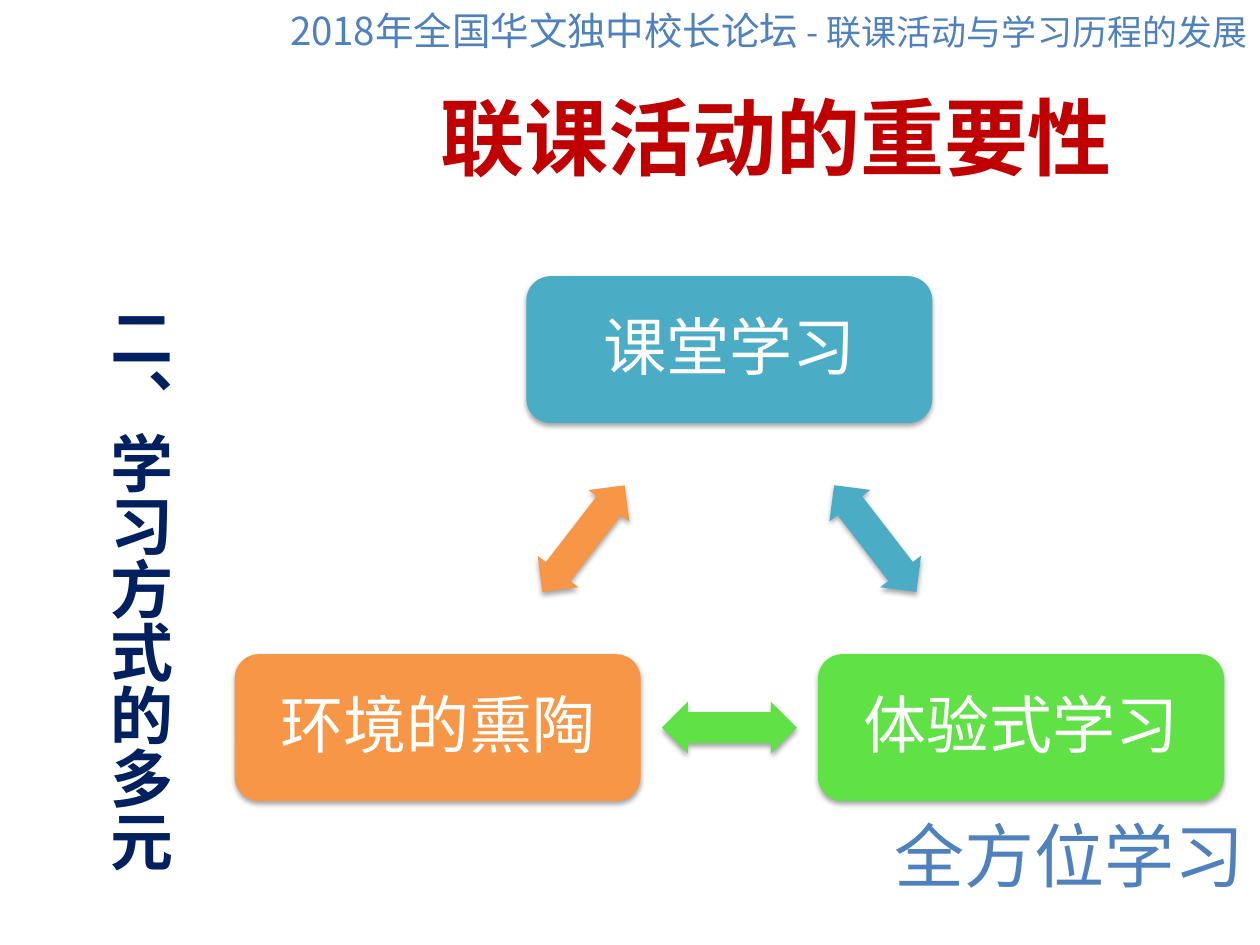
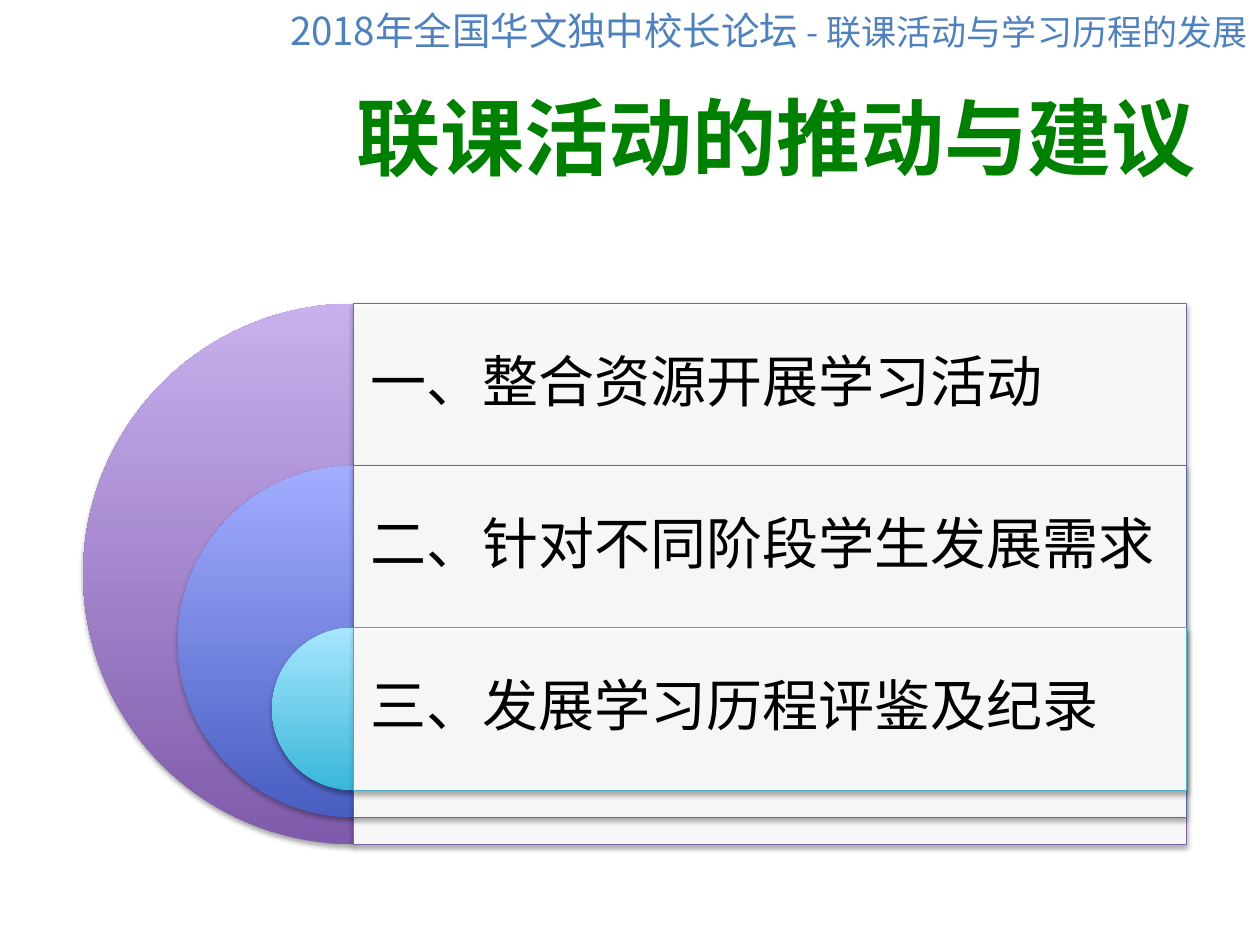
from dataclasses import dataclass
from math import atan2, degrees

from lxml.etree import SubElement
from pptx import Presentation
from pptx.dml.color import RGBColor
from pptx.enum.shapes import MSO_SHAPE as Preset
from pptx.enum.text import MSO_ANCHOR as Anchor, MSO_AUTO_SIZE as AutoSize, PP_ALIGN as Align
from pptx.oxml.ns import qn
from pptx.util import Pt


@dataclass(frozen=True)
class Theme:
    font: str = "Noto Sans CJK SC"
    blue: str = "4F81BD"
    pale_blue: str = "95B3D7"
    navy: str = "002060"
    red: str = "C00000"
    green: str = "008000"
    teal: str = "4BACC6"
    lime: str = "60E146"
    orange: str = "F79646"
    white: str = "FFFFFF"
    black: str = "000000"
    forum_size: int = 22
    topic_size: int = 20
    title_size: int = 48
    node_size: int = 36
    band_size: int = 32
    closing_size: int = 40


THEME = Theme()

WHITE_EDGE = (THEME.white, 0.75)
PALE_EDGE = (THEME.pale_blue, 0.25)

# name, colour, centre x, centre y
LEARNING_MODES = [
    ("课堂学习", THEME.teal, 416.8, 199.8),
    ("体验式学习", THEME.lime, 583.5, 415.8),
    ("环境的熏陶", THEME.orange, 250.1, 415.8),
]

# text, dark and light end of the half disc, edge of the panel
PROPOSALS = [
    ("一、整合资源开展学习活动", "7F5BAB", "C8B0ED", "8064A2"),
    ("二、针对不同阶段学生发展需求", "495EC2", "A2ADFF", "5767B4"),
    ("三、发展学习历程评鉴及纪录", "39B7D8", "A7E6FF", THEME.teal),
]


def apply(target, formats):
    for attribute, value in formats.items():
        setattr(target, attribute, value)


def points(*lengths):
    return [Pt(length) for length in lengths]


def add_colour(parent, colour, alpha=None):
    """Append an srgbClr, with an optional opacity in percent."""
    node = SubElement(parent, qn("a:srgbClr"), val=colour)
    if alpha is not None:
        SubElement(node, qn("a:alpha"), val=str(alpha * 1000))


def add_soft_shadow(shape):
    shape.shadow.inherit = False
    effects = shape._element.spPr.find(qn("a:effectLst"))
    shadow = SubElement(effects, qn("a:outerShdw"), blurRad=str(Pt(3.1)), dist=str(Pt(1.8)),
                        dir="5400000", rotWithShape="0")
    add_colour(shadow, THEME.black, 35)


def add_solid(slide, preset, box, colour, adjustments=()):
    """Add a borderless shape with a soft shadow; box is left, top, width, height."""
    shape = slide.shapes.add_shape(preset, *points(*box))
    for index, value in enumerate(adjustments):
        shape.adjustments[index] = value
    shape.fill.solid()
    shape.fill.fore_color.rgb = RGBColor.from_string(colour)
    shape.line.fill.background()
    add_soft_shadow(shape)
    return shape


def add_run(paragraph, text, size, colour, bold=False, edge=None):
    run = paragraph.add_run()
    run.text = text
    apply(run.font, {"size": Pt(size), "bold": bold, "name": THEME.font})
    run.font.color.rgb = RGBColor.from_string(colour)
    properties = run._r.get_or_add_rPr()
    SubElement(properties, qn("a:ea"), typeface=THEME.font)
    if edge:
        edge_colour, width = edge
        outline = SubElement(properties, qn("a:ln"), w=str(Pt(width)))
        add_colour(SubElement(outline, qn("a:solidFill")), edge_colour)
        properties.insert(0, outline)


def write(shape, runs, align=Align.CENTER, inset=None, paragraph_format=None, **frame_format):
    """Fill the first paragraph of a shape; each run is the arguments of add_run."""
    frame = shape.text_frame
    apply(frame, {"word_wrap": True, "vertical_anchor": Anchor.MIDDLE} | frame_format)
    if inset is not None:
        sides = ("margin_left", "margin_top", "margin_right", "margin_bottom")
        apply(frame, dict.fromkeys(sides, Pt(inset)))
    paragraph = frame.paragraphs[0]
    apply(paragraph, {"alignment": align} | (paragraph_format or {}))
    for run in runs:
        add_run(paragraph, *run)


def add_text(slide, box, runs, **formats):
    textbox = slide.shapes.add_textbox(*points(*box))
    write(textbox, runs, **formats)
    return textbox


def diagram_spacing(size):
    return {"line_spacing": 0.9, "space_after": Pt(0.35 * size)}


def add_forum_header(slide):
    add_text(slide, (0, 0.7, 720, 34), [
        ("2018年全国华文独中校长论坛 ", THEME.forum_size, THEME.blue, False, PALE_EDGE),
        ("- 联课活动与学习历程的发展", THEME.topic_size, THEME.blue, False, PALE_EDGE),
    ], align=Align.RIGHT, vertical_anchor=Anchor.TOP, auto_size=AutoSize.SHAPE_TO_FIT_TEXT)


def add_title(slide, text, colour):
    add_text(slide, (167, 32.4, 553, 90),
             [(text, THEME.title_size, colour, True, WHITE_EDGE)])


def add_vertical_heading(slide, text):
    heading = add_text(slide, (46.8, 167.8, 58.3, 334),
                       [(text, THEME.node_size, THEME.navy, True, WHITE_EDGE)],
                       align=Align.LEFT, vertical_anchor=Anchor.TOP, word_wrap=False,
                       auto_size=AutoSize.SHAPE_TO_FIT_TEXT)
    heading.text_frame._txBody.bodyPr.set("vert", "eaVert")
    indent = heading.text_frame.paragraphs[0]._p.get_or_add_pPr()
    indent.set("marL", str(Pt(42)))
    indent.set("indent", str(-Pt(42)))


def add_mode(slide, name, colour, x, y, width=232, height=84):
    node = add_solid(slide, Preset.ROUNDED_RECTANGLE,
                     (x - width / 2, y - height / 2, width, height), colour)
    write(node, [(name, THEME.node_size, THEME.white)], inset=15,
          paragraph_format=diagram_spacing(THEME.node_size))


def add_exchange_arrow(slide, start, end, width=77, height=29.5):
    """Add a double arrow halfway between two modes, turned along their line."""
    _, colour, x1, y1 = start
    _, _, x2, y2 = end
    box = ((x1 + x2 - width) / 2, (y1 + y2 - height) / 2, width, height)
    arrow = add_solid(slide, Preset.LEFT_RIGHT_ARROW, box, colour, (0.6, 0.5))
    arrow.rotation = degrees(atan2(y2 - y1, x2 - x1)) % 360


def add_half_disc(slide, centre_x, top, diameter, dark, light):
    disc = add_solid(slide, Preset.PIE, (centre_x - diameter / 2, top, diameter, diameter),
                     dark, (54, 162))
    disc.fill.gradient()
    disc.fill.gradient_angle = 90
    for stop, colour in zip(disc.fill.gradient_stops, (dark, light)):
        stop.color.rgb = RGBColor.from_string(colour)


def add_panel(slide, box, edge):
    panel = add_solid(slide, Preset.RECTANGLE, box, THEME.white)
    white = panel._element.spPr.find(qn("a:solidFill")).find(qn("a:srgbClr"))
    SubElement(white, qn("a:alpha"), val="90000")
    panel.line.color.rgb = RGBColor.from_string(edge)
    panel.line.width = Pt(0.75)


def add_proposals(slide, left=202, top=173.5, width=476, band=92.6, diameter=309, shrink=108):
    for level, (text, dark, light, edge) in enumerate(PROPOSALS):
        level_top = top + level * band
        size = diameter - level * shrink
        add_half_disc(slide, left, level_top, size, dark, light)
        add_panel(slide, (left, level_top, width, size), edge)
        add_text(slide, (left, level_top, width, band),
                 [(text, THEME.band_size, THEME.black)], align=Align.LEFT, inset=9.6,
                 paragraph_format=diagram_spacing(THEME.band_size))


def build_importance(slide):
    for index, mode in enumerate(LEARNING_MODES):
        add_mode(slide, *mode)
        add_exchange_arrow(slide, mode, LEARNING_MODES[(index + 1) % len(LEARNING_MODES)])
    add_title(slide, "联课活动的重要性", THEME.red)
    add_vertical_heading(slide, "二、学习方式的多元")
    add_text(slide, (502.5, 445.7, 217.5, 85),
             [("全方位学习", THEME.closing_size, THEME.blue)])


def build_suggestions(slide):
    add_title(slide, "联课活动的推动与建议", THEME.green)
    add_proposals(slide)


def main():
    deck = Presentation()
    apply(deck, {"slide_width": Pt(720), "slide_height": Pt(540)})
    for build in (build_importance, build_suggestions):
        slide = deck.slides.add_slide(deck.slide_layouts[6])
        build(slide)
        add_forum_header(slide)
    deck.save("out.pptx")


if __name__ == "__main__":
    main()
